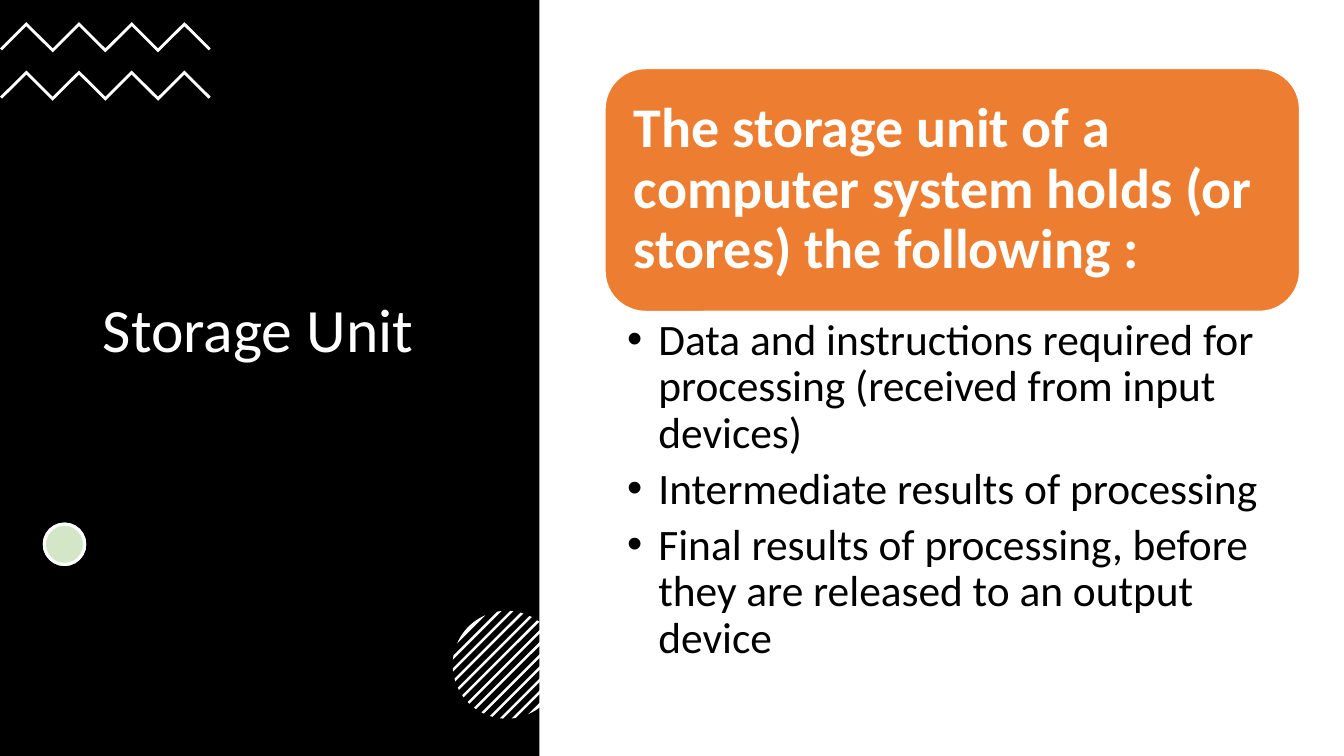
import math
from pptx import Presentation
from pptx.dml.color import RGBColor
from pptx.enum import shapes, text
from pptx.oxml import ns
from pptx.util import Inches, Pt
from lxml import etree

FONT = "Calibri"
HUES = {"white": "FFFFFF", "black": "000000", "orange": "ED7D31", "green": "70AD47"}
KIND = shapes.MSO_SHAPE
POINTS = [
    "Data and instructions required for processing (received from input devices)",
    "Intermediate results of processing",
    "Final results of processing, before they are released to an output device",
]


def color(name):
    """Return the named colour."""
    return RGBColor.from_string(HUES[name])


def paint(shape, fill, line=None, width=1):
    """Give a shape a plain fill and an optional outline."""
    shape.shadow.inherit = False
    shape.fill.solid()
    shape.fill.fore_color.rgb = color(fill)
    if line:
        shape.line.color.rgb = color(line)
        shape.line.width = Pt(width)
    else:
        shape.line.fill.background()


def place(shape, box):
    """Move a shape to a box given in inches."""
    shape.left, shape.top, shape.width, shape.height = map(Inches, box)


def inset(frame, left, top, right, bottom):
    """Set wrapping, a fixed size and the inner margins of a frame."""
    frame.word_wrap = True
    frame.auto_size = text.MSO_AUTO_SIZE.NONE
    frame.margin_left, frame.margin_top = Inches(left), Inches(top)
    frame.margin_right, frame.margin_bottom = Inches(right), Inches(bottom)


def style(para, size, hue, bold=False):
    """Format a left-aligned paragraph and its runs."""
    para.alignment = text.PP_ALIGN.LEFT
    para.line_spacing = 0.9
    para.space_before = Pt(0)
    for run in para.runs:
        run.font.name, run.font.size, run.font.bold = FONT, Pt(size), bold
        run.font.color.rgb = color(hue)


def outline(group, dots):
    """Draw a closed white outline through points in inches."""
    spots = [(Inches(x), Inches(y)) for x, y in dots]
    pen = group.shapes.build_freeform(*spots[0])
    pen.add_line_segments(spots[1:], close=True)
    paint(pen.convert_to_shape(), "white")


def zigzag(slide, box, rows=2, pitch=0.48, thick=0.04):
    """Draw rows of zigzag bands, the first one filling the box."""
    left, top, width, height = box
    group = slide.shapes.add_group_shape()
    step, rise, trim = width / 8, height - thick, thick / 2
    for row in range(rows):
        base = top + row * pitch
        upper = [(left + i * step, base + (rise if i % 2 == 0 else 0)) for i in range(9)]
        lower = [(x, y + thick) for x, y in upper[1:-1]]
        ends = [(x + side * trim, y + trim) for (x, y), side in ((upper[0], 1), (upper[-1], -1))]
        outline(group, upper + [ends[1]] + lower[::-1] + [ends[0]])


def stripes(slide, box, count=6, step=0.085, half=0.0125):
    """Fill the circle in the box with diagonal stripes."""
    left, top, size, _ = box
    rad = size / 2
    group = slide.shapes.add_group_shape()
    for k in range(-count, count + 1):
        near, far = k * step - half, k * step + half
        near = -rad if k == -count else near
        far = rad if k == count else far
        start, stop = math.acos(near / rad), math.acos(far / rad)
        turns = [start + (stop - start) * i / 6 for i in range(7)]
        turns += [-turn for turn in reversed(turns)]
        outline(group, [(left + rad + rad * math.cos(turn + math.pi / 4),
                         top + rad + rad * math.sin(turn + math.pi / 4)) for turn in turns])


def spot(slide, box):
    """Draw a white disc with a pale green tint over it."""
    for hue in ("white", "green"):
        disc = slide.shapes.add_shape(KIND.OVAL, *map(Inches, box))
        paint(disc, hue, "white", 2.25)
    tint = disc.fill._xPr.find(".//" + ns.qn("a:srgbClr"))
    etree.SubElement(tint, ns.qn("a:alpha")).set("val", "30000")


def panel(slide, box):
    """Build the dark title panel with its ornaments."""
    left, top, width, height = box
    back = slide.shapes.add_shape(KIND.RECTANGLE, *map(Inches, box))
    paint(back, "black")
    title = slide.shapes.title
    title._element.addprevious(back._element)
    place(title, (left + 0.92, top + 1.31, 3.5, 4.63))
    frame = title.text_frame
    frame.text = "Storage Unit"
    inset(frame, 0.1, 0.05, 0.1, 0.71)
    frame.vertical_anchor = text.MSO_ANCHOR.MIDDLE
    style(frame.paragraphs[0], 44, "white")
    zigzag(slide, (left, top + 0.22, 2.09, 0.3))
    spot(slide, (left + 0.44, top + 5.2, 0.4, 0.4))
    stripes(slide, (left + width - 0.86, top + 6.06, 1.07, 1.07))


def content(slide, box):
    """Build the heading block and the bullet list below it."""
    left, top, width, height = box
    head = 2.41
    block = slide.shapes.add_shape(KIND.ROUNDED_RECTANGLE, *map(Inches, (left, top, width, head)))
    paint(block, "orange", "white")
    frame = block.text_frame
    frame.text = "The storage unit of a computer system holds (or stores) the following :"
    inset(frame, 0.17, 0.17, 0.17, 0.17)
    frame.vertical_anchor = text.MSO_ANCHOR.MIDDLE
    style(frame.paragraphs[0], 40, "white", True)

    body = slide.placeholders[1]
    place(body, (left, top + head, width, height - head))
    frame = body.text_frame
    frame.text = "\n".join(POINTS)
    inset(frame, 0.22, 0.06, 0.31, 0.06)
    frame.vertical_anchor = text.MSO_ANCHOR.TOP
    for para in frame.paragraphs:
        props = para._p.get_or_add_pPr()
        props.set("marL", str(Inches(0.31)))
        props.set("indent", str(Inches(-0.31)))
        etree.SubElement(props, ns.qn("a:buFont")).set("typeface", "Arial")
        etree.SubElement(props, ns.qn("a:buChar")).set("char", "•")
        style(para, 31, "black")
        para.space_after = Pt(6.2)


def main():
    """Build and save the slide."""
    deck = Presentation()
    deck.slide_width, deck.slide_height = Inches(13.33), Inches(7.5)
    slide = deck.slides.add_slide(deck.slide_layouts[1])
    panel(slide, (0, 0, 5.35, 7.5))
    content(slide, (6, 0.68, 6.89, 6.11))
    deck.save("out.pptx")


if __name__ == "__main__":
    main()
